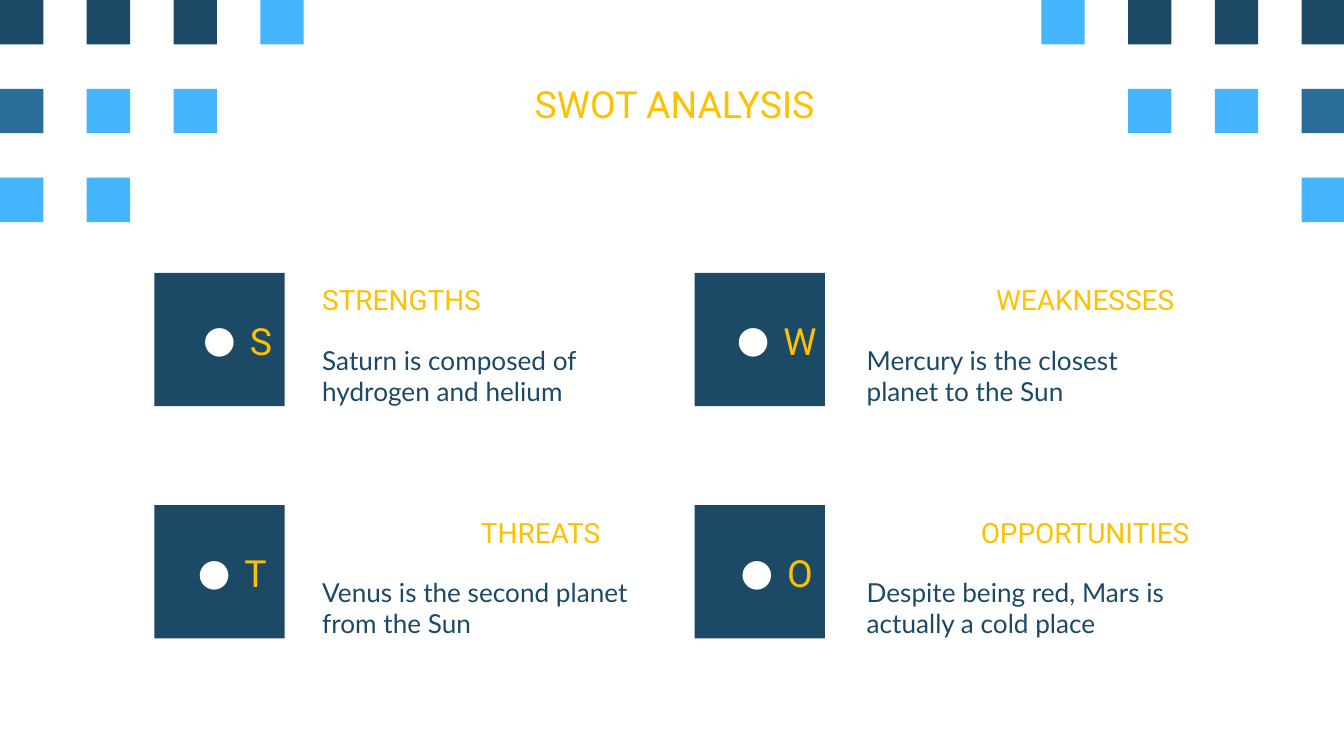
from lxml import etree
from pptx import Presentation
from pptx.dml.color import RGBColor
from pptx.enum.shapes import MSO_SHAPE
from pptx.enum.text import MSO_ANCHOR, PP_ALIGN
from pptx.oxml.ns import qn
from pptx.util import Cm, Pt

RECTANGLE = MSO_SHAPE.RECTANGLE
MIDDLE = MSO_ANCHOR.MIDDLE
LEFT, CENTER = PP_ALIGN.LEFT, PP_ALIGN.CENTER

COLORS = {"navy": "1C4966", "steel": "296D98", "sky": "45B6FE",
          "gold": "FFC000", "white": "FFFFFF"}
HEADING_FONT, BODY_FONT = "Roboto", "Lato"


class SwotSlide:
    """Draws styled elements on the current slide, with lengths in centimetres."""

    def __init__(self, slide):
        self.slide = slide

    def square(self, left, top, width, height, color):
        square = self.slide.shapes.add_shape(
            RECTANGLE, Cm(left), Cm(top), Cm(width), Cm(height))
        square.shadow.inherit = False
        square.fill.solid()
        square.fill.fore_color.rgb = RGBColor.from_string(COLORS[color])
        square.line.fill.background()

    def text(self, words, left, top, width, height, size, color="gold",
             font=HEADING_FONT, align=LEFT, insets=(0.25, 0.25), wrap=True):
        box = self.slide.shapes.add_textbox(Cm(left), Cm(top), Cm(width), Cm(height))
        frame = box.text_frame
        frame.text = words
        frame.word_wrap = wrap
        frame.vertical_anchor = MIDDLE
        frame.margin_left, frame.margin_right = map(Cm, insets)
        frame.margin_top = frame.margin_bottom = Cm(0.25)
        paragraph = frame.paragraphs[0]
        paragraph.alignment = align
        style = paragraph.runs[0].font
        style.name, style.size = font, Pt(size)
        style.color.rgb = RGBColor.from_string(COLORS[color])
        return paragraph

    def indent(self, paragraph, margin, first_line=0):
        properties = paragraph._p.get_or_add_pPr()
        properties.set("marL", str(Cm(margin)))
        properties.set("indent", str(Cm(first_line)))
        return properties

    def bullet(self, paragraph):
        properties = self.indent(paragraph, 1.27, -0.88)
        color = etree.SubElement(properties, qn("a:buClr"))
        etree.SubElement(color, qn("a:srgbClr"), val=COLORS["white"])
        etree.SubElement(properties, qn("a:buFont"), typeface=HEADING_FONT)
        etree.SubElement(properties, qn("a:buChar"), char="●")

    def corner_pattern(self, rows, tones):
        for row, pattern in enumerate(rows):
            for column, tone in enumerate(pattern):
                if tone in tones:
                    self.square(column * 1.64, row * 1.68, 0.82, 0.84, tones[tone])

    def quadrant(self, heading, body, tile_left, text_left, top, letter_left, align):
        self.square(tile_left, top, 2.46, 2.52, "navy")
        title = self.text(heading, text_left, top - 0.12, 7.49, 1.25, 15, align=align)
        if align == CENTER:
            self.indent(title, 1.27)
        self.text(body, text_left, top + 1.14, 6.73, 1.6, 14, "navy", BODY_FONT)
        letter = self.text(heading[0], letter_left, top + 0.76, 1.27, 1.02, 20,
                           align=CENTER, insets=(0.13, 0))
        self.bullet(letter)


def main():
    deck = Presentation()
    deck.slide_width, deck.slide_height = Cm(25.4), Cm(14.29)
    swot = SwotSlide(deck.slides.add_slide(deck.slide_layouts[6]))

    swot.corner_pattern(
        ["NNNS........SNNN", "SSS..........SSS".replace("SSS", "TSS", 1)[:-1] + "T",
         "SS.............S"],
        {"N": "navy", "T": "steel", "S": "sky"})
    swot.text("SWOT ANALYSIS", 1.98, 1.5, 21.41, 0.91, 20,
              align=CENTER, insets=(0.13, 0))

    left_column, right_column = (2.92, 5.84), (13.13, 16.13)
    upper, lower = 5.16, 9.55
    for heading, body, column, top, letter_left, align in [
        ("STRENGTHS", "Saturn is composed of hydrogen and helium",
         left_column, upper, 3.53, LEFT),
        ("WEAKNESSES", "Mercury is the closest planet to the Sun",
         right_column, upper, 13.72, CENTER),
        ("THREATS", "Venus is the second planet from the Sun",
         left_column, lower, 3.43, CENTER),
        ("OPPORTUNITIES", "Despite being red, Mars is actually a cold place",
         right_column, lower, 13.72, CENTER),
    ]:
        swot.quadrant(heading, body, *column, top, letter_left, align)

    deck.save("out.pptx")


if __name__ == "__main__":
    main()
